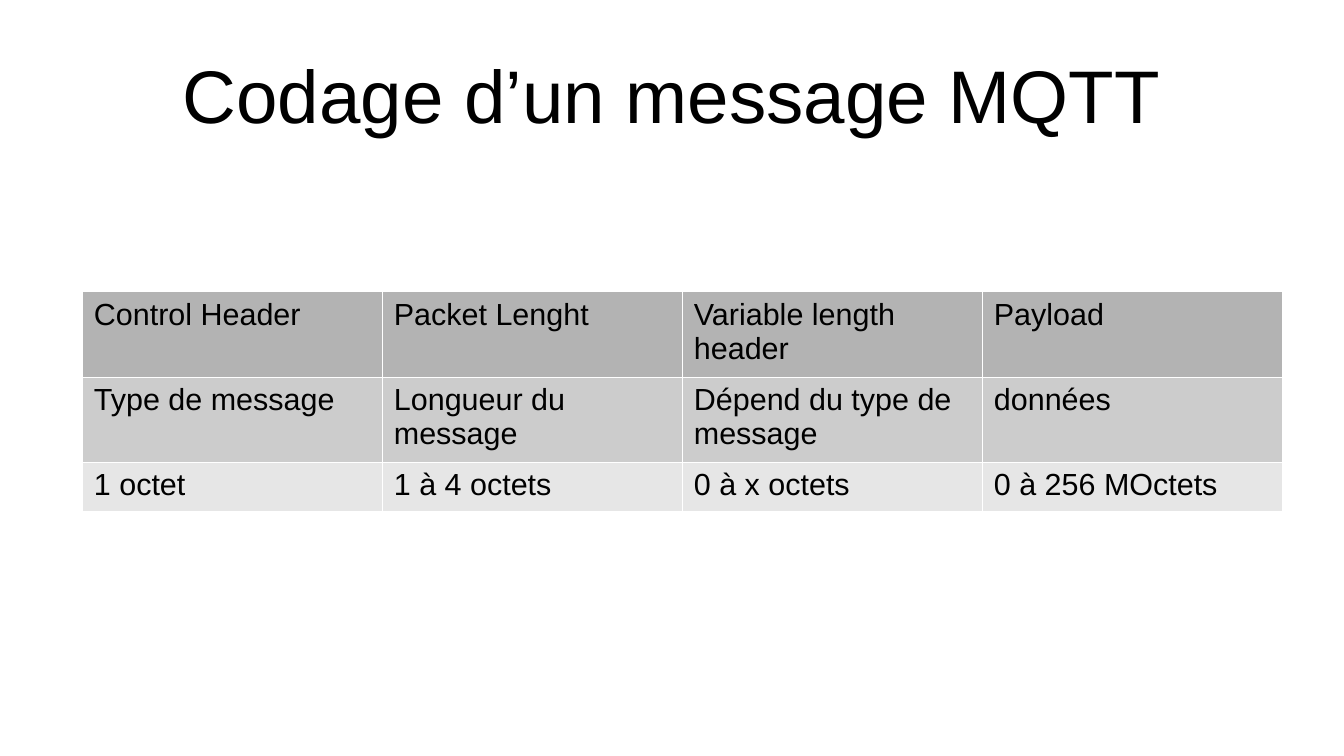
from lxml import etree
from pptx import Presentation
from pptx import util as u
from pptx.dml.color import RGBColor
from pptx.enum import text
from pptx.oxml import ns

COLORS = {
    "ink": "000000",
    "edge": "FFFFFF",
    "head": "B3B3B3",
    "mid": "CCCCCC",
    "low": "E6E6E6",
}
FONT = "Arial"

# Fill, height and cell texts of each row
ROWS = [
    ("head", 0.66, ["Control Header", "Packet Lenght",
                    "Variable length header", "Payload"]),
    ("mid", 0.66, ["Type de message", "Longueur du message",
                   "Dépend du type de message", "données"]),
    ("low", 0.38, ["1 octet", "1 à 4 octets",
                   "0 à x octets", "0 à 256 MOctets"]),
]


def color(name):
    return RGBColor.from_string(COLORS[name])


def style(para, size):
    para.font.name = FONT
    para.font.size = u.Pt(size)
    para.font.color.rgb = color("ink")


def border(cell, width):
    # Border lines must stand before the fill in the cell properties
    props = cell._tc.get_or_add_tcPr()
    for i, side in enumerate("LRTB"):
        line = etree.Element(ns.qn(f"a:ln{side}"), w=str(u.Pt(width)))
        fill = etree.SubElement(line, ns.qn("a:solidFill"))
        etree.SubElement(fill, ns.qn("a:srgbClr"), val=COLORS["edge"])
        props.insert(i, line)


def add_title(slide, words, left, top, width, height):
    box = slide.shapes.add_textbox(*map(u.Inches, (left, top, width, height)))
    frame = box.text_frame
    frame.word_wrap = True
    frame.vertical_anchor = text.MSO_ANCHOR.MIDDLE
    frame.margin_left = frame.margin_right = 0
    frame.margin_top = frame.margin_bottom = 0
    para = frame.paragraphs[0]
    para.text = words
    para.alignment = text.PP_ALIGN.CENTER
    style(para, 44)


def add_grid(slide, rows, left, top, width):
    count = len(rows[0][2])
    height = sum(row[1] for row in rows)
    table = slide.shapes.add_table(
        len(rows), count, *map(u.Inches, (left, top, width, height))).table
    for col in table.columns:
        col.width = u.Inches(width / count)
    for r, (tone, tall, words) in enumerate(rows):
        table.rows[r].height = u.Inches(tall)
        for c, word in enumerate(words):
            cell = table.cell(r, c)
            cell.text = word
            cell.fill.solid()
            cell.fill.fore_color.rgb = color(tone)
            para = cell.text_frame.paragraphs[0]
            style(para, 18)
            para.font.bold = False
            border(cell, 0.06)


def main():
    deck = Presentation()
    deck.slide_width = u.Inches(11.02)
    deck.slide_height = u.Inches(6.2)
    slide = deck.slides.add_slide(deck.slide_layouts[6])

    # Title
    add_title(slide, "Codage d’un message MQTT", 0.55, 0.25, 9.92, 1.03)
    # Message fields
    add_grid(slide, ROWS, 0.67, 2.39, 9.84)

    deck.save("out.pptx")


if __name__ == "__main__":
    main()
